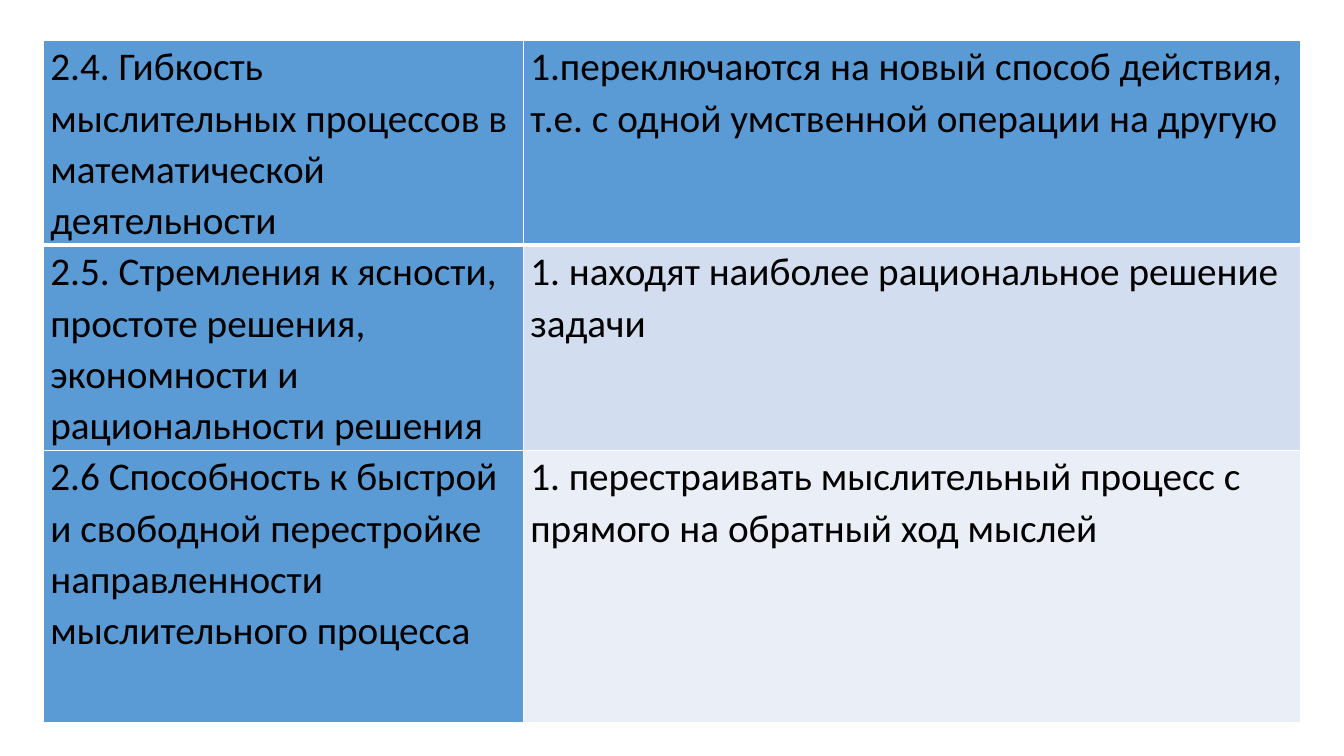
from lxml.etree import SubElement
from pptx import Presentation
from pptx.dml.color import RGBColor
from pptx.oxml.ns import qn
from pptx.util import Inches, Pt

WHITE = RGBColor(0xFF, 0xFF, 0xFF)
BLACK = RGBColor(0x00, 0x00, 0x00)
BLUE = RGBColor(0x5B, 0x9B, 0xD5)
PALE_BLUE = RGBColor(0xD2, 0xDE, 0xEF)
LIGHT_BLUE = RGBColor(0xEA, 0xEF, 0xF7)

PAGE_WIDTH, PAGE_HEIGHT = 13.33, 7.5
COLUMN_WIDTHS = (4.76, 7.71)
ROW_HEIGHTS = (2.02, 2.02, 2.7)
THIN, THICK = 1, 3

# Each row: ability, how it shows, fill of the right cell
ABILITIES = (
    ("2.4. Гибкость мыслительных процессов в математической деятельности",
     "1.переключаются на новый способ действия, т.е. с одной умственной операции на другую",
     BLUE),
    ("2.5. Стремления к ясности, простоте решения, экономности и рациональности решения",
     "1. находят наиболее рациональное решение задачи",
     PALE_BLUE),
    ("2.6 Способность к быстрой и свободной перестройке направленности мыслительного процесса",
     "1. перестраивать мыслительный процесс с прямого на обратный ход мыслей",
     LIGHT_BLUE),
)


def write(frame, text, *, font="Calibri", size=28, color=BLACK, spacing=1.07):
    para = frame.paragraphs[0]
    para.line_spacing = spacing
    span = para.add_run()
    span.text = text
    span.font.name = font
    span.font.size = Pt(size)
    span.font.bold = False
    span.font.color.rgb = color


class Page:
    def __init__(self, deck, side_inset=0.07, border_color=WHITE):
        self.slide = deck.slides.add_slide(deck.slide_layouts[6])
        self.width, self.height = deck.slide_width, deck.slide_height
        self.side_inset = Inches(side_inset)
        self.border_color = border_color

    def table(self, left, top, column_widths, row_heights):
        """Add a plain table; left and top are shares of the slide's size."""
        frame = self.slide.shapes.add_table(
            len(row_heights), len(column_widths),
            int(left * self.width), int(top * self.height),
            Inches(sum(column_widths)), Inches(sum(row_heights)))
        table = frame.table
        table.first_row = table.horz_banding = False
        for column, width in zip(table.columns, column_widths):
            column.width = Inches(width)
        for row, height in zip(table.rows, row_heights):
            row.height = Inches(height)
        return table

    def cell(self, cell, text, fill, top=THIN, bottom=THIN):
        """Fill one cell; top and bottom are border widths in points."""
        cell.margin_left = cell.margin_right = self.side_inset
        cell.margin_top = cell.margin_bottom = 0
        borders = {"lnL": THIN, "lnR": THIN, "lnT": top, "lnB": bottom}
        for side, width in borders.items():
            self.border(cell, side, width)
        cell.fill.solid()
        cell.fill.fore_color.rgb = fill
        write(cell.text_frame, text)

    def border(self, cell, side, width):
        properties = cell._tc.get_or_add_tcPr()
        line = SubElement(properties, qn(f"a:{side}"), w=str(Pt(width)))
        solid = SubElement(line, qn("a:solidFill"))
        SubElement(solid, qn("a:srgbClr"), val=str(self.border_color))


def main():
    deck = Presentation()
    deck.slide_width, deck.slide_height = Inches(PAGE_WIDTH), Inches(PAGE_HEIGHT)
    page = Page(deck)
    table = page.table(0.43 / PAGE_WIDTH, 0.4 / PAGE_HEIGHT, COLUMN_WIDTHS, ROW_HEIGHTS)
    for row, (ability, sign, fill) in enumerate(ABILITIES):
        edges = {"top": THICK if row == 1 else THIN,
                 "bottom": THICK if row == 0 else THIN}
        page.cell(table.cell(row, 0), ability, BLUE, **edges)
        page.cell(table.cell(row, 1), sign, fill, **edges)
    deck.save("out.pptx")


if __name__ == "__main__":
    main()
